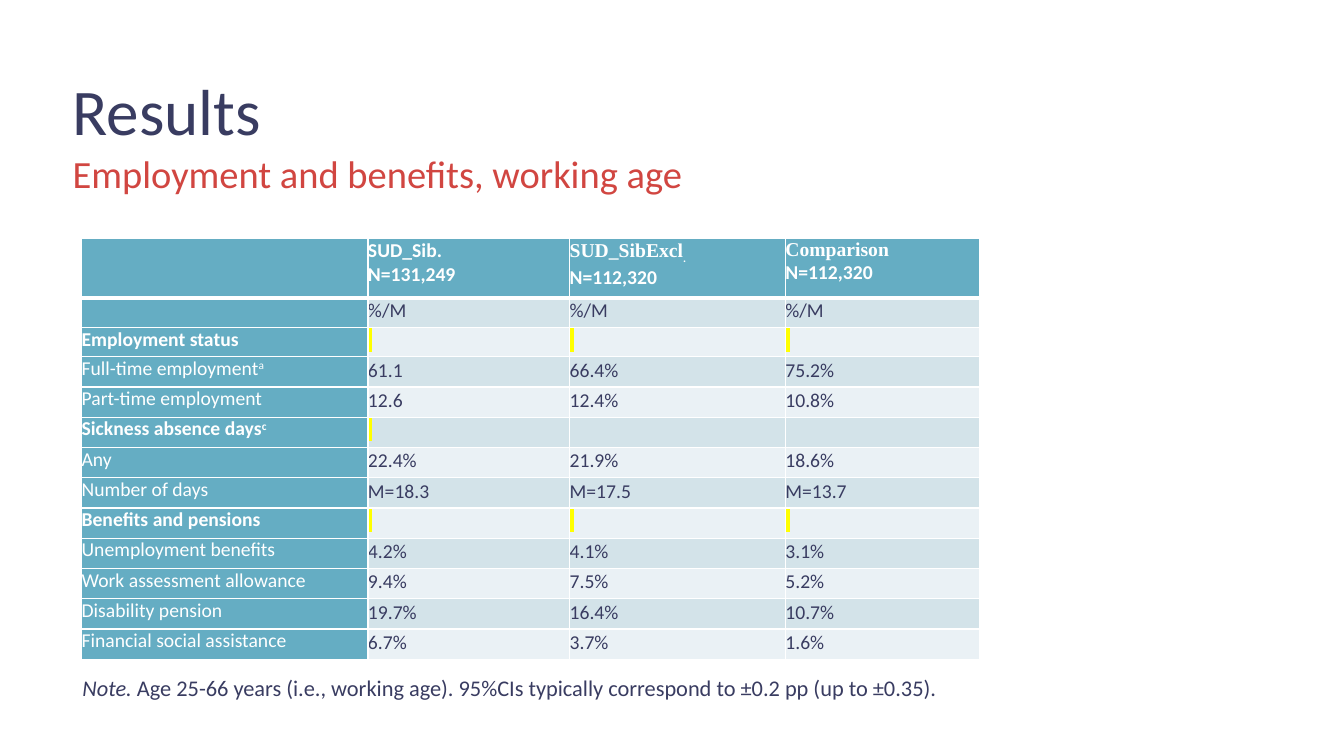
from dataclasses import dataclass

from lxml import etree
from pptx import Presentation
from pptx import util as u
from pptx.dml.color import RGBColor
from pptx.oxml.ns import qn


@dataclass(frozen=True)
class Theme:
    navy: str = "393C61"
    red: str = "D14641"
    teal: str = "65ADC3"
    band_dark: str = "D3E3E9"
    band_light: str = "EAF1F5"
    white: str = "FFFFFF"
    yellow: str = "FFFF00"
    sans: str = "Calibri"
    serif: str = "Times New Roman"
    title: float = 46.5
    subtitle: float = 27.5
    note: float = 16
    table: float = 14


theme = Theme()


def add_span(para, words, size, color, bold=False, italic=False, font=theme.sans, baseline=0):
    span = para.add_run()
    span.text = words
    span.font.size = u.Pt(size)
    span.font.name = font
    span.font.bold = bold
    span.font.italic = italic
    span.font.color.rgb = RGBColor.from_string(color)
    if baseline:
        span.font._element.set("baseline", str(baseline * 1000))
    return span


def set_borders(cell, widths):
    """Draw white cell edges; widths maps L, R, T and B to points."""
    props = cell._tc.get_or_add_tcPr()
    for index, (side, width) in enumerate(widths.items()):
        line = etree.Element(qn(f"a:ln{side}"), w=str(u.Pt(width)))
        fill = etree.SubElement(line, qn("a:solidFill"))
        etree.SubElement(fill, qn("a:srgbClr"), val=theme.white)
        props.insert(index, line)


deck = Presentation()
deck.slide_width = u.Inches(13.33)
deck.slide_height = u.Inches(7.5)
page = deck.slides.add_slide(deck.slide_layouts[6])

# Headings
for words, top, height, size, color, spacing in (
    ("Results", 0.79, 0.7, theme.title, theme.navy, 0.9),
    ("Employment and benefits, working age", 1.49, 0.46, theme.subtitle, theme.red, 1.0),
):
    box = page.shapes.add_textbox(u.Inches(0.72), u.Inches(top), u.Inches(11.88), u.Inches(height))
    frame = box.text_frame
    frame.word_wrap = True
    frame.margin_left = frame.margin_right = frame.margin_top = frame.margin_bottom = 0
    para = frame.paragraphs[0]
    para.line_spacing = spacing
    add_span(para, words, size, color)

# Results table: label, superscript, values; a section row lists its highlighted columns
headers = [
    ("SUD_Sib.", "", "N=131,249", theme.sans),
    ("SUD_SibExcl", ".", "N=112,320", theme.serif),
    ("Comparison", "", "N=112,320", theme.serif),
]
sections = {"Employment status": (1, 2, 3), "Sickness absence days": (1,), "Benefits and pensions": (1, 2, 3)}
rows = [
    ("", "", ["%/M", "%/M", "%/M"]),
    ("Employment status", "", ["", "", ""]),
    ("Full-time employment", "a", ["61.1", "66.4%", "75.2%"]),
    ("Part-time employment", "", ["12.6", "12.4%", "10.8%"]),
    ("Sickness absence days", "c", ["", "", ""]),
    ("Any", "", ["22.4%", "21.9%", "18.6%"]),
    ("Number of days", "", ["M=18.3", "M=17.5", "M=13.7"]),
    ("Benefits and pensions", "", ["", "", ""]),
    ("Unemployment benefits", "", ["4.2%", "4.1%", "3.1%"]),
    ("Work assessment allowance", "", ["9.4%", "7.5%", "5.2%"]),
    ("Disability pension", "", ["19.7%", "16.4%", "10.7%"]),
    ("Financial social assistance", "", ["6.7%", "3.7%", "1.6%"]),
]
column_widths = [2.84, 2, 2.14, 1.93]
row_heights = [0.59, 0.29, 0.29] + [0.3] * 10
table = page.shapes.add_table(
    len(row_heights), len(column_widths), u.Inches(0.81), u.Inches(2.37),
    u.Inches(sum(column_widths)), u.Inches(sum(row_heights)),
).table
for column, width in zip(table.columns, column_widths):
    column.width = u.Inches(width)
for row, height in zip(table.rows, row_heights):
    row.height = u.Inches(height)

for column, (name, subscript, count, font) in enumerate(headers, start=1):
    frame = table.cell(0, column).text_frame
    add_span(frame.paragraphs[0], name, theme.table, theme.white, bold=True, font=font)
    if subscript:
        add_span(frame.paragraphs[0], subscript, theme.table, theme.white, bold=True, baseline=-25)
    add_span(frame.add_paragraph(), count, theme.table, theme.white, bold=True)

for number, (label, superscript, values) in enumerate(rows, start=1):
    para = table.cell(number, 0).text_frame.paragraphs[0]
    is_section = label in sections
    if label:
        add_span(para, label, theme.table, theme.white, bold=is_section)
    if superscript:
        add_span(para, superscript, theme.table, theme.white, bold=is_section, baseline=30)
    for column, value in enumerate(values, start=1):
        para = table.cell(number, column).text_frame.paragraphs[0]
        if value:
            add_span(para, value, theme.table, theme.navy)
            if number > 1:
                para.line_spacing = 1.07
                para.space_after = u.Pt(6)
        elif column in sections[label]:
            span = add_span(para, " ", theme.table, theme.navy)
            highlight = etree.Element(qn("a:highlight"))
            etree.SubElement(highlight, qn("a:srgbClr"), val=theme.yellow)
            span.font._element.find(qn("a:latin")).addprevious(highlight)

for number in range(len(row_heights)):
    for column in range(len(column_widths)):
        cell = table.cell(number, column)
        cell.margin_left = cell.margin_right = cell.margin_top = cell.margin_bottom = 0
        cell.fill.solid()
        band = theme.band_dark if number % 2 else theme.band_light
        fill = theme.teal if number == 0 or column == 0 else band
        cell.fill.fore_color.rgb = RGBColor.from_string(fill)
        set_borders(cell, {"L": 1, "R": 1, "T": 3 if number == 1 else 1, "B": 3 if number == 0 else 1})
        para = cell.text_frame.paragraphs[0]
        if not para.runs:
            etree.SubElement(para._p, qn("a:endParaRPr"), sz=str(theme.table * 100))

# Note
box = page.shapes.add_textbox(u.Inches(0.72), u.Inches(6.64), u.Inches(10.03), u.Inches(0.37))
box.text_frame.word_wrap = True
para = box.text_frame.paragraphs[0]
add_span(para, "Note. ", theme.note, theme.navy, italic=True)
add_span(
    para,
    "Age 25-66 years (i.e., working age). 95%CIs typically correspond to ±0.2 pp (up to ±0.35).",
    theme.note, theme.navy,
)

deck.save("out.pptx")
